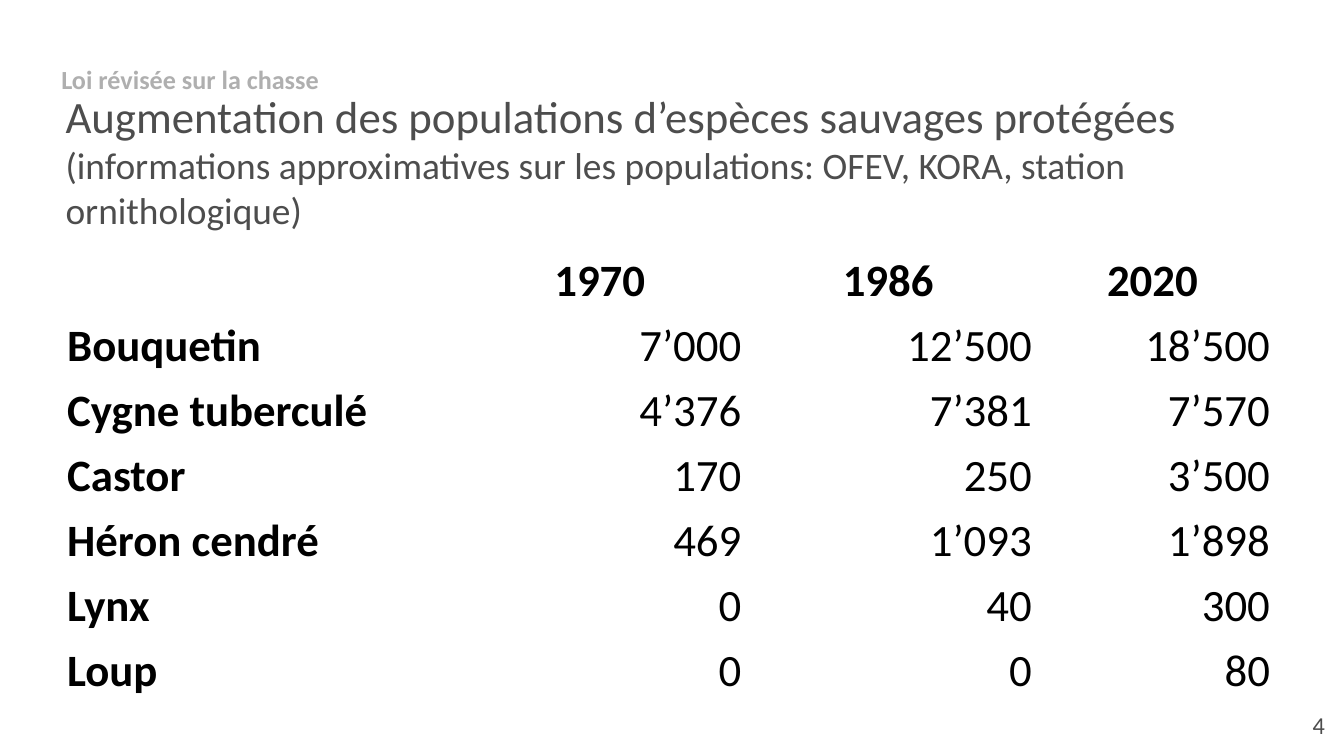
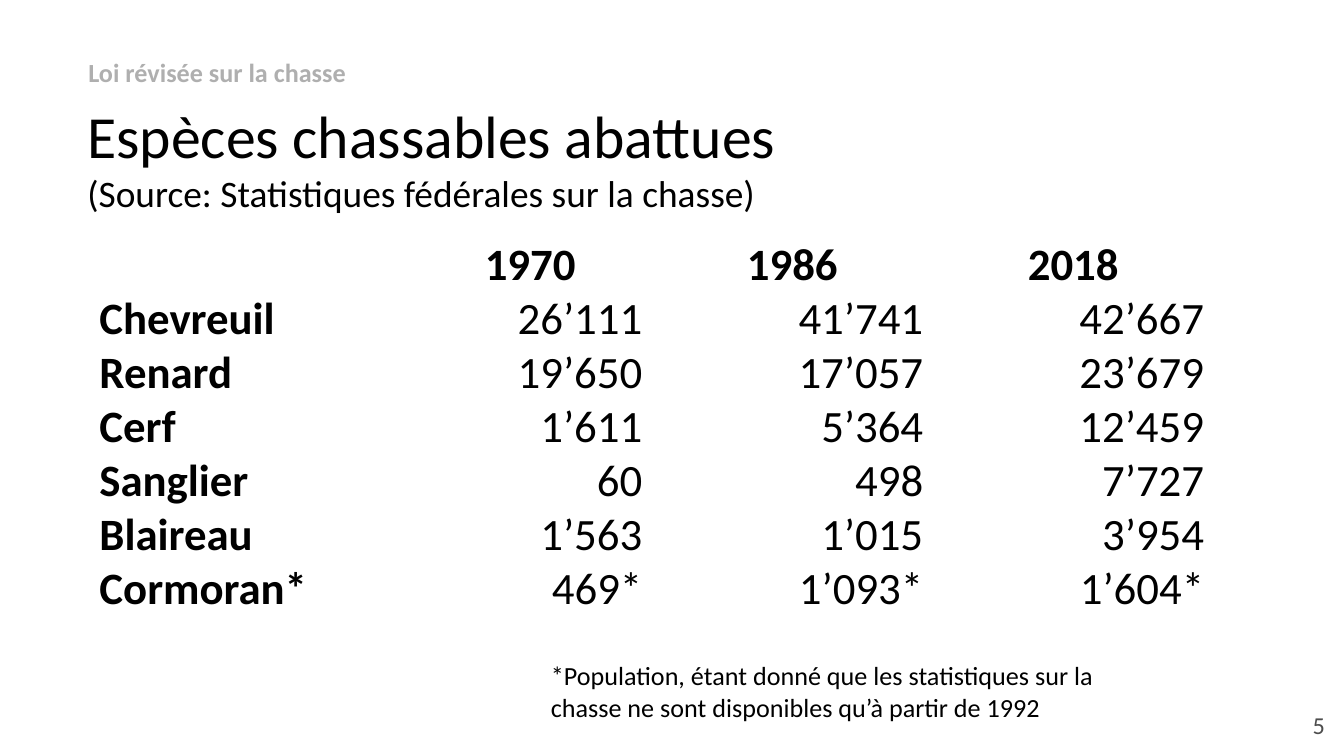
from dataclasses import dataclass

from pptx import Presentation
from pptx.dml.color import RGBColor
from pptx.enum.text import MSO_ANCHOR as Anchor, PP_ALIGN as Align
from pptx.util import Cm, Pt

BLACK = RGBColor(0x00, 0x00, 0x00)
DARK = RGBColor(0x4D, 0x4D, 0x4D)
PALE = RGBColor(0xAF, 0xAF, 0xAF)
FONT = "Calibri"
LAW = "Loi révisée sur la chasse"
NONE = (0, 0, 0, 0)
PAD = (0.25, 0.13, 0.25, 0.13)


@dataclass(frozen=True)
class Box:
    """Place and size in centimetres."""
    left: float
    top: float
    width: float
    height: float

    def cm(self) -> tuple:
        """Return the four lengths."""
        return Cm(self.left), Cm(self.top), Cm(self.width), Cm(self.height)


@dataclass(frozen=True)
class Grid:
    """A table of yearly counts per species."""
    left: float
    top: float
    cols: tuple
    row: float
    inset: tuple
    anchor: Anchor
    years: tuple
    counts: dict


def inset(frame, sides: tuple) -> None:
    """Set the left, top, right and bottom margins of a frame or cell."""
    names = "margin_left", "margin_top", "margin_right", "margin_bottom"
    for name, side in zip(names, sides):
        setattr(frame, name, Cm(side))


def write(para, text: str, size=24, color=BLACK, bold=False, align=Align.LEFT) -> None:
    """Add a run of formatted text to a paragraph."""
    para.alignment = align
    run = para.add_run()
    run.text = text
    font = run.font
    font.name, font.size, font.bold = FONT, Pt(size), bold
    font.color.rgb = color


def frame(slide, box: Box, sides: tuple = PAD):
    """Add a wrapping text box and return its text frame."""
    body = slide.shapes.add_textbox(*box.cm()).text_frame
    body.word_wrap = True
    inset(body, sides)
    return body


def label(slide, box: Box) -> None:
    """Add the topic line above the title."""
    para = frame(slide, box, NONE).paragraphs[0]
    para.line_spacing = 1.61
    props = para._p.get_or_add_pPr()
    props.set("marL", str(Cm(1.27)))
    props.set("indent", str(-Cm(0.64)))
    write(para, LAW, size=14, color=PALE, bold=True)


def number(slide, page: int) -> None:
    """Add the page number."""
    body = frame(slide, Box(23.77, 13.18, 1.52, 1.09), (0.25,) * 4)
    write(body.paragraphs[0], str(page), size=13, color=DARK, align=Align.RIGHT)


def table(slide, grid: Grid) -> None:
    """Draw the counts with bold years and species."""
    rows = [("", *grid.years)] + [(name, *vals) for name, vals in grid.counts.items()]
    box = Box(grid.left, grid.top, sum(grid.cols), grid.row * len(rows))
    tab = slide.shapes.add_table(len(rows), len(grid.cols), *box.cm()).table
    tab.first_row = tab.horz_banding = False
    for col, width in zip(tab.columns, grid.cols):
        col.width = Cm(width)
    for r, row in enumerate(rows):
        tab.rows[r].height = Cm(grid.row)
        for c, text in enumerate(row):
            cell = tab.cell(r, c)
            cell.fill.background()
            inset(cell, grid.inset)
            cell.vertical_anchor = grid.anchor
            if text:
                align = Align.LEFT if c == 0 else Align.RIGHT if r else Align.CENTER
                write(cell.text_frame.paragraphs[0], text,
                      bold=r == 0 or c == 0, align=align)


WILD = Grid(
    1.24, 4.6, (7.39, 5.41, 5.49, 4.5), 1.23, (0.03, 0.03, 0.03, 0), Anchor.BOTTOM,
    ("1970", "1986", "2020"),
    {
        "Bouquetin": ("7’000", "12’500", "18’500"),
        "Cygne tuberculé": ("4’376", "7’381", "7’570"),
        "Castor": ("170", "250", "3’500"),
        "Héron cendré": ("469", "1’093", "1’898"),
        "Lynx": ("0", "40", "300"),
        "Loup": ("0", "0", "80"),
    },
)
GAME = Grid(
    1.7, 4.5, (6.02, 4.6, 5.31, 5.31), 1.02, (0.18, 0, 0.18, 0), Anchor.TOP,
    ("1970", "1986", "2018"),
    {
        "Chevreuil": ("26’111", "41’741", "42’667"),
        "Renard": ("19’650", "17’057", "23’679"),
        "Cerf": ("1’611", "5’364", "12’459"),
        "Sanglier": ("60", "498", "7’727"),
        "Blaireau": ("1’563", "1’015", "3’954"),
        "Cormoran*": ("469*", "1’093*", "1’604*"),
    },
)


def start(deck, page: int, grid: Grid, topic: Box):
    """Add a slide with its number, table and topic line."""
    slide = deck.slides.add_slide(deck.slide_layouts[6])
    number(slide, page)
    table(slide, grid)
    label(slide, topic)
    return slide


def growth(deck) -> None:
    """Build the slide on protected species."""
    slide = start(deck, 4, WILD, Box(0.53, 0.84, 23.24, 0.79))
    para = frame(slide, Box(1.24, 1.68, 23.75, 3.18), NONE).paragraphs[0]
    write(para, "Augmentation des populations d’espèces sauvages protégées ", color=DARK)
    write(para, "(informations approximatives sur les populations: OFEV, KORA, "
                "station ornithologique)", size=20, color=DARK)


def hunt(deck) -> None:
    """Build the slide on hunted species."""
    slide = start(deck, 5, GAME, Box(1.04, 0.71, 22.78, 0.79))
    body = frame(slide, Box(1.4, 1.73, 21.59, 3.07))
    write(body.paragraphs[0], "Espèces chassables abattues", size=32)
    write(body.add_paragraph(), "(Source: Statistiques fédérales sur la chasse)", size=20)
    note = frame(slide, Box(10.16, 12.34, 12.04, 0.86))
    write(note.paragraphs[0], "*Population, étant donné que les statistiques sur la chasse "
                              "ne sont disponibles qu’à partir de 1992", size=14)


def main() -> None:
    """Build and save the deck."""
    deck = Presentation()
    deck.slide_width, deck.slide_height = Cm(25.4), Cm(14.29)
    growth(deck)
    hunt(deck)
    deck.save("out.pptx")


if __name__ == "__main__":
    main()
